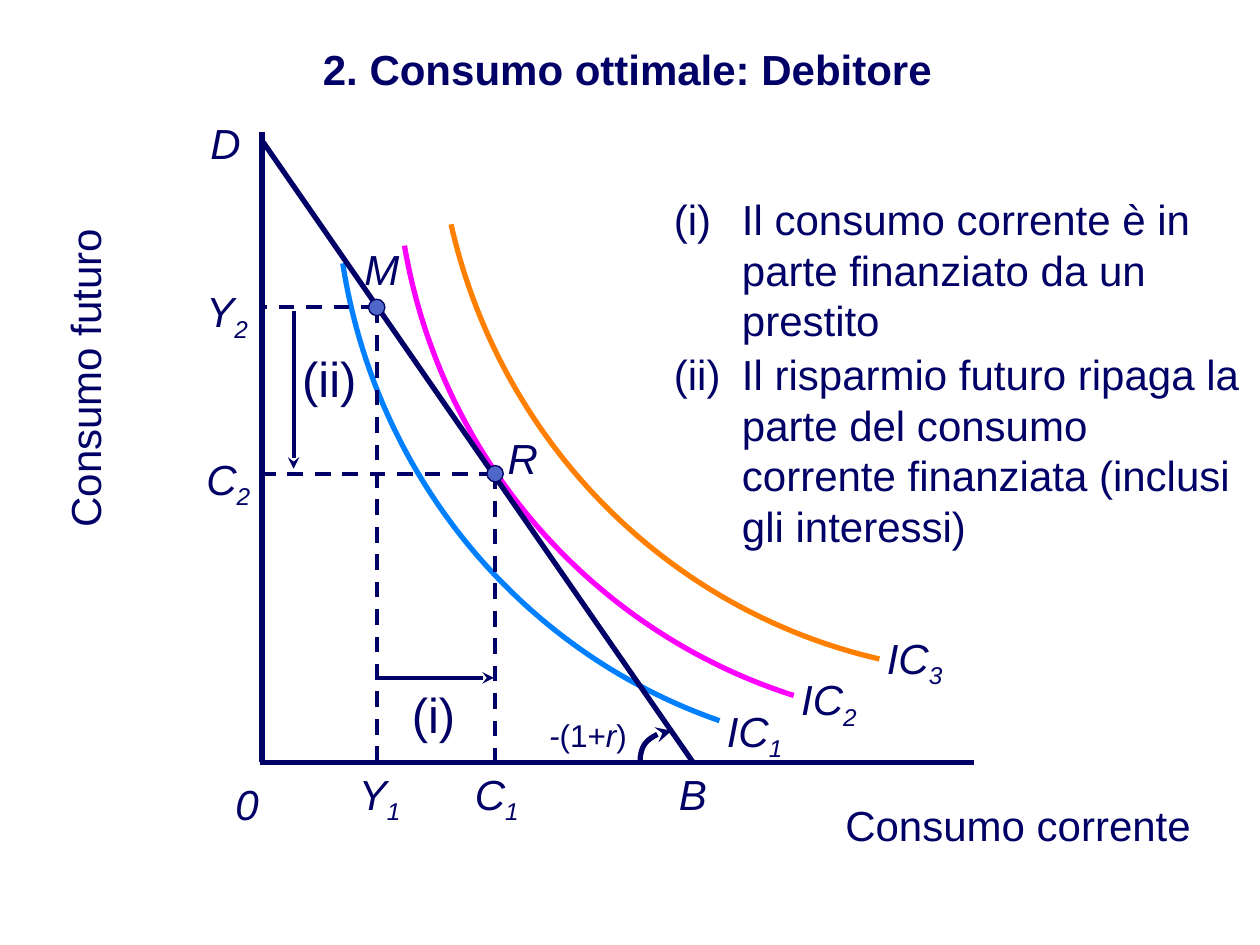
from itertools import cycle

from lxml.etree import SubElement
from pptx import Presentation
from pptx.dml.color import RGBColor
from pptx.enum.dml import MSO_LINE
from pptx.enum.shapes import MSO_CONNECTOR, MSO_SHAPE
from pptx.enum.text import MSO_ANCHOR, PP_ALIGN
from pptx.oxml.ns import qn
from pptx.util import Inches, Pt

COLUMNS, ROWS = 100, 75
NAVY, DOT_BLUE = "000066", "4E67C8"
ORIGIN = (20.8, 60.5)
ENDOWMENT = (29.9, 24.4)
OPTIMUM = (39.3, 37.6)
SUBSCRIPTED = ("italic", "italic sub")


def grid(cells):
    """Turn a number of grid cells into a length."""
    return Inches(10 * cells / COLUMNS)


def color(value):
    """Turn a hex string into a colour."""
    return RGBColor.from_string(value)


def add_text(page, place, text, size=24, styles=("",), align=PP_ALIGN.LEFT,
             anchor=MSO_ANCHOR.TOP, rotation=0, hanging=0, numbering=None):
    """Add a text box whose parts, split at bars, take the styles in turn."""
    box = page.shapes.add_textbox(*map(grid, place))
    box.rotation = rotation
    frame = box.text_frame
    frame.word_wrap = True
    frame.vertical_anchor = anchor
    para = frame.paragraphs[0]
    para.alignment = align
    if hanging:
        properties = para._p.get_or_add_pPr()
        properties.set("marL", str(grid(hanging)))
        properties.set("indent", str(-grid(hanging)))
        if numbering:
            SubElement(properties, qn("a:buFont"), typeface="Arial")
            SubElement(properties, qn("a:buAutoNum"), type=numbering)
    for part, style in zip(text.split("|"), cycle(styles)):
        span = para.add_run()
        span.text = part
        span.font.name = "Arial"
        span.font.size = Pt(size)
        span.font.color.rgb = color(NAVY)
        span.font.bold = "bold" in style
        span.font.italic = "italic" in style
        if "sub" in style:
            span.font._element.set("baseline", "-25000")
    return box


def add_point_label(page, left, top, text):
    """Add a centred italic letter."""
    add_text(page, (left, top, 5.8, 5), text, styles=("italic",),
             align=PP_ALIGN.CENTER)


def format_line(shape, width, line_color=NAVY, dashed=False, arrow=False):
    """Set the stroke of a line or curve."""
    shape.line.color.rgb = color(line_color)
    shape.line.width = Pt(width)
    if dashed:
        shape.line.dash_style = MSO_LINE.DASH
    if arrow:
        stroke = shape.element.spPr.find(qn("a:ln"))
        SubElement(stroke, qn("a:tailEnd"), type="stealth")


def add_line(page, start, end, width=2.25, **stroke):
    """Add a straight line between two grid points."""
    line = page.shapes.add_connector(MSO_CONNECTOR.STRAIGHT,
                                     *map(grid, start + end))
    SubElement(line.element.spPr, qn("a:effectLst"))
    format_line(line, width, **stroke)


def add_curve(page, start, *controls, **stroke):
    """Add an open cubic curve through its start, two controls and end."""
    builder = page.shapes.build_freeform(*map(grid, start))
    builder.add_line_segments([tuple(map(grid, point)) for point in controls],
                              close=False)
    curve = builder.convert_to_shape()
    outline = next(curve.element.iter(qn("a:path")))
    outline.set("fill", "none")
    segments = outline.findall(qn("a:lnTo"))
    cubic = SubElement(outline, qn("a:cubicBezTo"))
    for segment in segments:
        cubic.append(segment[0])
        outline.remove(segment)
    curve.shadow.inherit = False
    curve.fill.background()
    format_line(curve, 3, **stroke)


def add_dot(page, center, size=1.3):
    """Add a round marker on a grid point."""
    left, top = (value - size / 2 for value in center)
    dot = page.shapes.add_shape(MSO_SHAPE.OVAL,
                                *map(grid, (left, top, size, size)))
    dot.shadow.inherit = False
    dot.fill.solid()
    dot.fill.fore_color.rgb = color(DOT_BLUE)
    format_line(dot, 0.75)


def add_choice(page, point, letter, letter_place, name, below, beside):
    """Add a chosen point with its guides, marker and axis labels."""
    add_point_label(page, *letter_place, letter)
    add_line(page, point, (ORIGIN[0], point[1]), dashed=True)
    add_line(page, point, (point[0], ORIGIN[1]), dashed=True)
    for number, (left, top) in enumerate((below, beside), 1):
        add_text(page, (left, top, 6.3, 5), f"{name}|{number}",
                 styles=SUBSCRIPTED)
    add_dot(page, point)


def add_indifference_curves(page):
    """Add the three indifference curves with their names."""
    curves = (
        ("0080FF", (56.7, 55.5),
         ((27.2, 20.9), (29.8, 37.7), (41.3, 51.7), (57.1, 57.2))),
        ("FF00FF", (62.6, 53),
         ((32.1, 19.5), (35, 36.4), (47, 50.1), (63, 55.2))),
        ("FF8000", (69.4, 49.7),
         ((35.8, 17.8), (39.7, 35), (52.9, 48.4), (69.8, 52.3))),
    )
    for number, (line_color, place, points) in enumerate(curves, 1):
        add_curve(page, *points, line_color=line_color)
        add_text(page, (*place, 7.5, 5), f"IC|{number}", styles=SUBSCRIPTED)


def add_axes(page):
    """Add the budget line, the axes and their names."""
    add_line(page, (55, 60.5), (20.9, 11.3), width=3)
    add_line(page, (20.8, 10.5), ORIGIN, width=3)
    add_line(page, (20.6, 60.5), (77.3, 60.5), width=3)
    add_point_label(page, 16.7, 61.3, "0")
    add_point_label(page, 52.1, 60.5, "B")
    add_point_label(page, 15, 8.8, "D")
    add_text(page, (63.3, 63, 35, 5), "Consumo corrente",
             align=PP_ALIGN.CENTER)
    add_text(page, (-12, 27.5, 37.4, 5), "Consumo futuro",
             align=PP_ALIGN.CENTER, rotation=270)


def add_remarks(page):
    """Add the two arrows and the remarks that explain them."""
    add_line(page, (30, 53.8), (39.2, 53.8), arrow=True)
    add_text(page, (31.7, 53.8, 7.5, 5.7), "(i)", size=28)
    add_text(page, (52.5, 14.9, 47.5, 13.1),
             "Il consumo corrente è in parte finanziato da un prestito",
             hanging=5.4, numbering="romanLcParenBoth")
    add_line(page, (23.3, 24.7), (23.3, 37.2), arrow=True)
    add_text(page, (23, 27.2, 7.5, 5.7), "(ii)", size=28)
    add_text(page, (52.5, 27.2, 47.5, 17.2),
             "(ii)\tIl risparmio futuro ripaga la parte del consumo corrente "
             "finanziata (inclusi gli interessi)", hanging=5.4)


def add_slope(page):
    """Add the slope of the budget line with its angle arrow."""
    add_text(page, (42.6, 56.3, 8.3, 4), "-|(1+|r|)", size=18,
             styles=("italic", ""))
    add_curve(page, (50.8, 60.5), (50.8, 59.1), (52, 58), (53.3, 58),
              arrow=True)


def main():
    """Build the slide and save it."""
    deck = Presentation()
    deck.slide_width, deck.slide_height = grid(COLUMNS), grid(ROWS)
    page = deck.slides.add_slide(deck.slide_layouts[6])
    add_text(page, (0, 2.1, 99.6, 6.7), "2. Consumo ottimale: Debitore",
             styles=("bold",), align=PP_ALIGN.CENTER,
             anchor=MSO_ANCHOR.MIDDLE)
    add_indifference_curves(page)
    add_axes(page)
    add_choice(page, OPTIMUM, "R", (38.6, 33.8), "C", (36.7, 60.5),
               (15.4, 35.5))
    add_choice(page, ENDOWMENT, "M", (27.4, 18.8), "Y", (27.5, 60.5),
               (15.4, 22.2))
    add_remarks(page)
    add_slope(page)
    deck.save("out.pptx")


if __name__ == "__main__":
    main()
